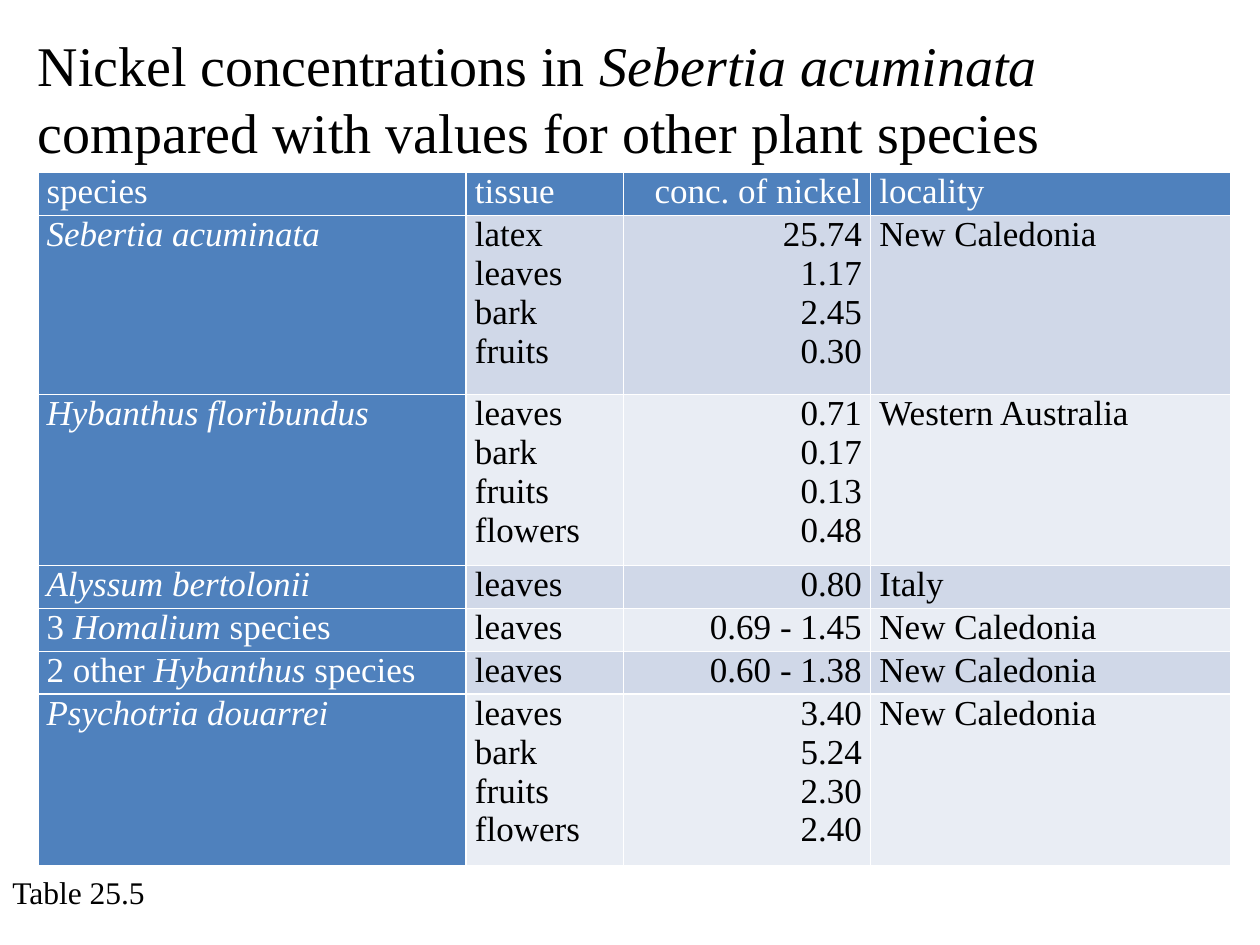
"""Build a slide with a table of nickel concentrations in plant species."""
import pptx
import pptx.dml.color
import pptx.enum.text
import pptx.util

PX = 9144
FONT = "Times New Roman"
BLUE, BAND_DARK, BAND_LIGHT = "4F81BD", "D0D8E8", "E9EDF4"
WHITE, BLACK = "FFFFFF", "000000"
LEFT, RIGHT = pptx.enum.text.PP_ALIGN.LEFT, pptx.enum.text.PP_ALIGN.RIGHT


def color(value):
    return pptx.dml.color.RGBColor.from_string(value)


def write(frame, text, size, ink, align=LEFT):
    """Write one paragraph per line, with italics between asterisks."""
    for index, line in enumerate(text.split("\n")):
        para = frame.paragraphs[0] if index == 0 else frame.add_paragraph()
        para.alignment = align
        para.font.name = FONT
        para.font.size = pptx.util.Pt(size)
        para.font.bold = False
        para.font.color.rgb = color(ink)
        for part, words in enumerate(line.split("*")):
            if words:
                span = para.add_run()
                span.text = words
                span.font.italic = part % 2 == 1


deck = pptx.Presentation()
deck.slide_width, deck.slide_height = 1000 * PX, 750 * PX
page = deck.slides.add_slide(deck.slide_layouts[5])

title = page.shapes.title
title.left, title.top, title.width, title.height = 20 * PX, 19 * PX, 943 * PX, 118 * PX
title.text_frame.vertical_anchor = pptx.enum.text.MSO_ANCHOR.TOP
title.text_frame.auto_size = pptx.enum.text.MSO_AUTO_SIZE.SHAPE_TO_FIT_TEXT
write(
    title.text_frame,
    "Nickel concentrations in *Sebertia acuminata* compared with values for other plant species",
    32,
    BLACK,
)

caption = page.shapes.add_textbox(0, 688 * PX, 133 * PX, 40 * PX)
caption.text_frame.word_wrap = False
write(caption.text_frame, "Table 25.5", 18, BLACK)

rows = [
    (34, "species", "tissue", "conc. of nickel", "locality"),
    (142, "*Sebertia acuminata*", "latex\nleaves\nbark\nfruits",
     "25.74\n1.17\n2.45\n0.30", "New Caledonia"),
    (136, "*Hybanthus floribundus*", "leaves\nbark\nfruits\nflowers",
     "0.71\n0.17\n0.13\n0.48", "Western Australia"),
    (34, "*Alyssum bertolonii*", "leaves", "0.80", "Italy"),
    (34, "3 *Homalium* species", "leaves", "0.69 - 1.45", "New Caledonia"),
    (34, "2 other *Hybanthus* species", "leaves", "0.60 - 1.38", "New Caledonia"),
    (136, "*Psychotria douarrei*", "leaves\nbark\nfruits\nflowers",
     "3.40\n5.24\n2.30\n2.40", "New Caledonia"),
]
widths = [340, 125, 196, 286]
table = page.shapes.add_table(
    len(rows), len(widths), 30 * PX, 137 * PX, sum(widths) * PX, 550 * PX
).table
table.first_col = True
for column, width in zip(table.columns, widths):
    column.width = width * PX

for row_index, (height, *texts) in enumerate(rows):
    table.rows[row_index].height = height * PX
    band = BAND_DARK if row_index % 2 else BAND_LIGHT
    for column_index, text in enumerate(texts):
        heading = row_index == 0 or column_index == 0
        cell = table.cell(row_index, column_index)
        cell.margin_left = cell.margin_right = 7 * PX
        cell.margin_top = cell.margin_bottom = 0
        cell.fill.solid()
        cell.fill.fore_color.rgb = color(BLUE if heading else band)
        write(cell.text_frame, text, 20, WHITE if heading else BLACK,
              RIGHT if column_index == 2 else LEFT)

deck.save("out.pptx")
